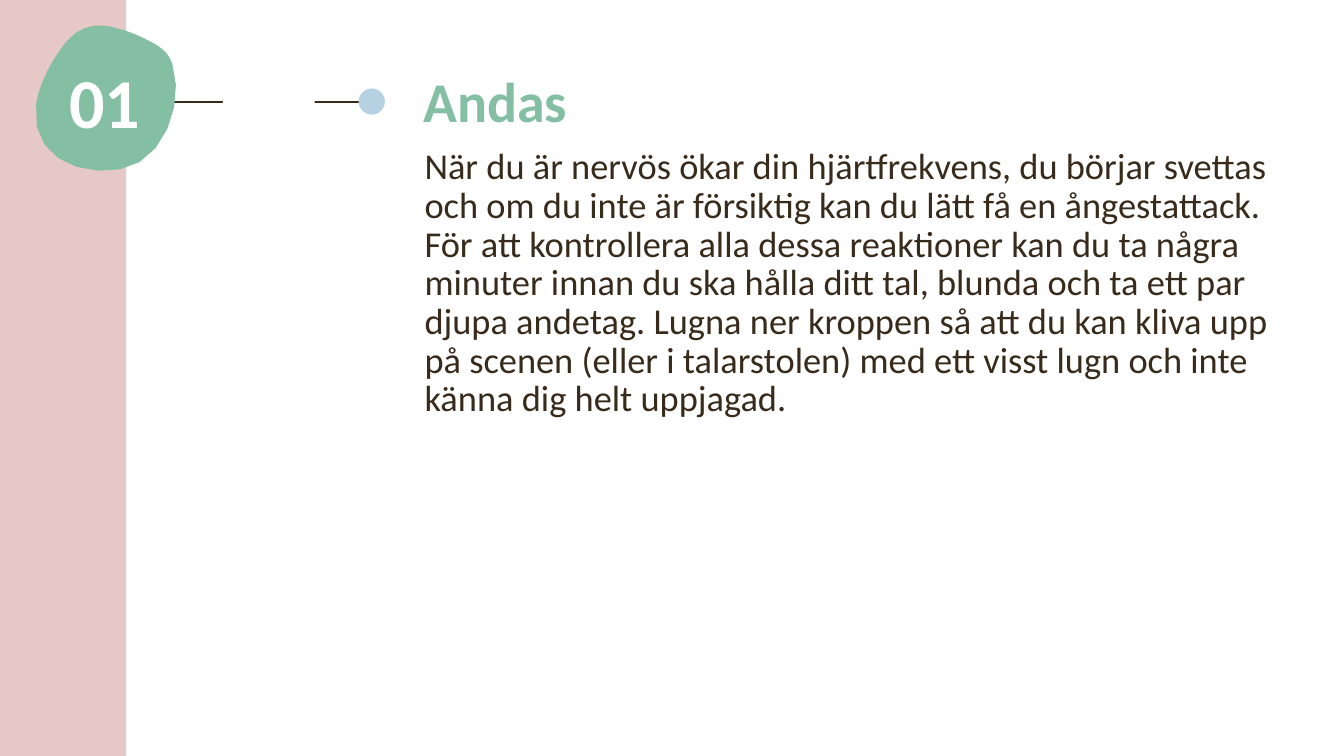
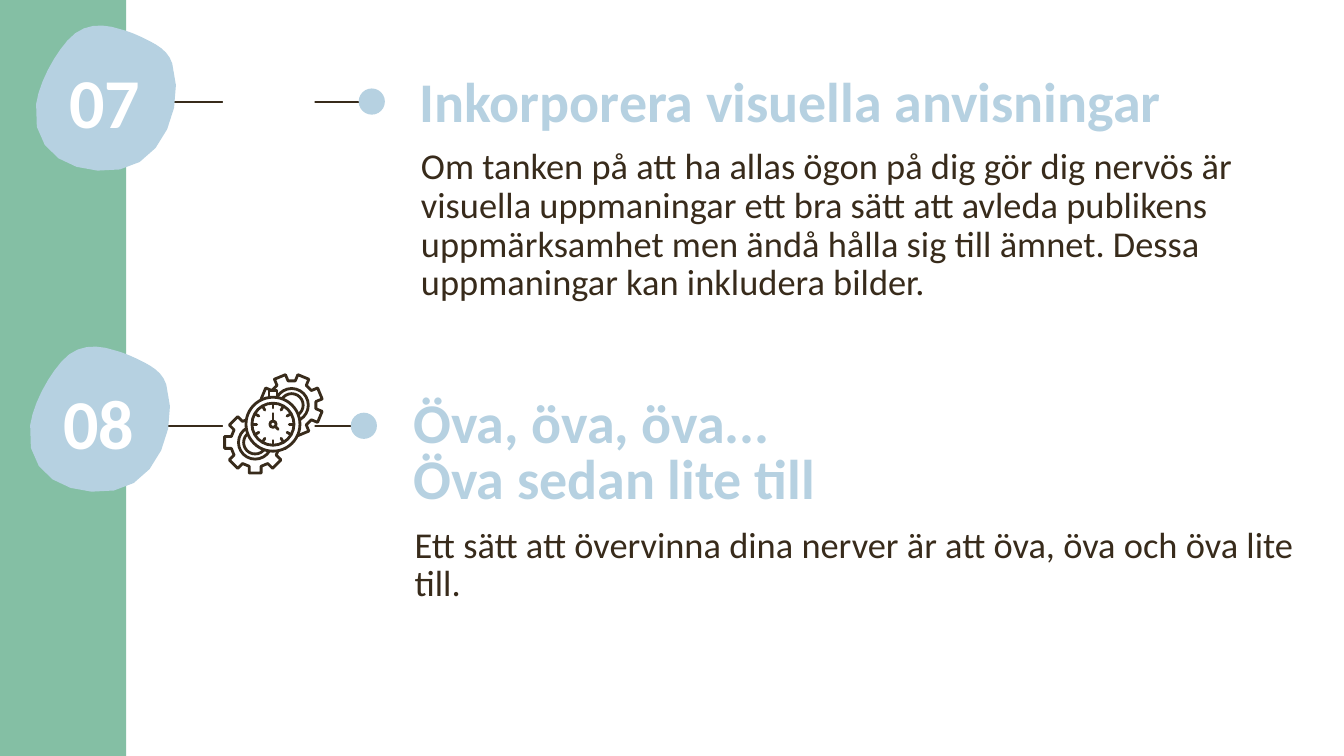
"""Build two slides of numbered advice on public speaking."""
from dataclasses import dataclass
from math import cos, pi, sin

from lxml.etree import SubElement
from pptx import Presentation
from pptx.dml.color import RGBColor as Rgb
from pptx.enum.shapes import MSO_CONNECTOR as Link, MSO_SHAPE as Kind
from pptx.enum.text import PP_ALIGN as Align
from pptx.oxml.ns import qn
from pptx.util import Cm, Pt

Point = tuple[float, float]
Loop = list[Point]
Box = tuple[float, float, float, float]

INK = {"pink": "E6C8C7", "green": "84BFA4", "blue": "B6D1E1",
       "dark": "382B1B", "white": "FFFFFF"}
FONT = "Calibri"
WIDE, HIGH = 33.87, 19.05
BLOB = [
    ((3.05, 0.74), (2.57, 0.58), (2.08, 0.58), (1.7, 1.02)),
    ((1.7, 1.02), (1.35, 1.42), (0.99, 2.08), (0.91, 2.62)),
    ((0.91, 2.62), (0.74, 3.89), (1.88, 4.45), (3.02, 4.27)),
    ((3.02, 4.27), (4.11, 4.09), (4.67, 2.64), (4.34, 1.6)),
    ((4.34, 1.6), (4.24, 1.27), (3.94, 1.12), (3.68, 0.99)),
    ((3.68, 0.99), (3.48, 0.89), (3.25, 0.79), (3.05, 0.74)),
]


@dataclass
class Style:
    size: float
    ink: str
    bold: bool = False
    lead: float | Pt = 1.0
    align: Align = Align.LEFT


@dataclass
class Tip:
    num: str
    title: list[str]
    text: str
    left: float
    size: Point = (22.12, 5.28)
    tall: float = 1.8
    shift: Point = (0, 0)
    rail: Point = (0, 0)
    drop: float = 0


@dataclass
class Page:
    band: str
    tint: str
    tips: list[Tip]
    clock: bool = False


PAGES = [
    Page("pink", "green", [Tip(
        "01", ["Andas"],
        "När du är nervös ökar din hjärtfrekvens, du börjar svettas och om du "
        "inte är försiktig kan du lätt få en ångestattack. För att kontrollera "
        "alla dessa reaktioner kan du ta några minuter innan du ska hålla ditt "
        "tal, blunda och ta ett par djupa andetag. Lugna ner kroppen så att du "
        "kan kliva upp på scenen (eller i talarstolen) med ett visst lugn och "
        "inte känna dig helt uppjagad.", 10.42)]),
    Page("green", "blue", [
        Tip("07", ["Inkorporera visuella anvisningar"],
            "Om tanken på att ha allas ögon på dig gör dig nervös är visuella "
            "uppmaningar ett bra sätt att avleda publikens uppmärksamhet men "
            "ändå hålla sig till ämnet. Dessa uppmaningar kan inkludera bilder.",
            10.33),
        Tip("08", ["Öva, öva, öva...", "Öva sedan lite till"],
            "Ett sätt att övervinna dina nerver är att öva, öva och öva lite "
            "till.", 10.17, (22.81, 5), 3.99, (-0.15, 8.09), (-0.2, 8.17),
            9.53),
    ], clock=True),
]


def tone(name: str) -> Rgb:
    """Return the named colour."""
    return Rgb.from_string(INK[name])


def paint(shape, fill: str | None, line: str | None = None) -> None:
    """Set fill and line, and drop the shadow."""
    shape.shadow.inherit = False
    if fill:
        shape.fill.solid()
        shape.fill.fore_color.rgb = tone(fill)
    else:
        shape.fill.background()
    if line:
        shape.line.color.rgb = tone(line)
        shape.line.width = Pt(2)
    else:
        shape.line.fill.background()


def block(slide, box: Box, fill: str) -> None:
    """Draw a plain rectangle."""
    paint(slide.shapes.add_shape(Kind.RECTANGLE, *map(Cm, box)), fill)


def disc(slide, mid: Point, size: float, fill: str,
         line: str | None = None) -> None:
    """Draw a circle of a given radius."""
    box = (mid[0] - size, mid[1] - size, 2 * size, 2 * size)
    paint(slide.shapes.add_shape(Kind.OVAL, *map(Cm, box)), fill, line)


def stroke(slide, start: Point, end: Point) -> None:
    """Draw a straight dark line."""
    line = slide.shapes.add_connector(Link.STRAIGHT, *map(Cm, start + end))
    line.line.color.rgb = tone("dark")
    line.line.width = Pt(1.5)
    SubElement(line._element.spPr, qn("a:effectLst"))


def trace(slide, loops: list[Loop], fill: str | None,
          line: str | None = None) -> None:
    """Draw closed outlines as one shape."""
    paths = [[(Cm(x), Cm(y)) for x, y in loop] for loop in loops]
    form = slide.shapes.build_freeform(*paths[0][0], scale=1.0)
    for i, dots in enumerate(paths):
        if i:
            form.move_to(*dots[0])
        form.add_line_segments(dots[1:], close=True)
    paint(form.convert_to_shape(), fill, line)


def write(slide, box: Box, lines: list[str], style: Style) -> None:
    """Add a text box with one paragraph per line."""
    frame = slide.shapes.add_textbox(*map(Cm, box)).text_frame
    frame.word_wrap = True
    for i, line in enumerate(lines):
        para = frame.add_paragraph() if i else frame.paragraphs[0]
        para.alignment = style.align
        para.line_spacing = style.lead
        run = para.add_run()
        run.text = line
        run.font.name = FONT
        run.font.size = Pt(style.size)
        run.font.bold = style.bold
        run.font.color.rgb = tone(style.ink)


def curve(ends: tuple[Point, ...], steps: int = 6) -> Loop:
    """Sample one cubic curve, leaving out its end."""
    def spot(t: float, axis: int) -> float:
        """Return one coordinate at t."""
        a, b, c, d = (end[axis] for end in ends)
        u = 1 - t
        return u**3 * a + 3 * u * u * t * b + 3 * u * t * t * c + t**3 * d
    return [(spot(i / steps, 0), spot(i / steps, 1)) for i in range(steps)]


def turn(mid: Point, far: float, angle: float, side: float = 0) -> Point:
    """Return the point far out and to the side along an angle."""
    return (mid[0] + far * cos(angle) - side * sin(angle),
            mid[1] + far * sin(angle) + side * cos(angle))


def ring(mid: Point, size: float, count: int = 24) -> Loop:
    """Return points around a circle."""
    return [turn(mid, size, 2 * pi * k / count) for k in range(count)]


def gear(mid: Point, start: float) -> list[Loop]:
    """Return an eight-toothed outline and two rings."""
    tooth = ((0.6, -0.15), (0.77, -0.15), (0.77, 0.15), (0.6, 0.15))
    teeth = [turn(mid, far, start + k * pi / 4, side)
             for k in range(8) for far, side in tooth]
    return [teeth, ring(mid, 0.42), ring(mid, 0.29)]


def clock(slide) -> None:
    """Draw a stopwatch in front of two gears."""
    mid = (6.88, 10.69)
    x, y = mid
    crown = [(x - 0.1, y - 0.6), (x - 0.1, y - 0.84),
             (x + 0.1, y - 0.84), (x + 0.1, y - 0.6)]
    trace(slide, gear((6.43, 11.15), 0) + gear((7.35, 10.21), pi / 8)
          + [crown], None, "dark")
    disc(slide, mid, 0.68, "white", "dark")
    ticks = [[turn(mid, far, k * pi / 6) for far in (0.41, 0.52)]
             for k in range(12)]
    trace(slide, [ring(mid, 0.53)] + ticks, "white", "dark")
    trace(slide, [ring(mid, 0.08, 8), [(x, y - 0.08), (x, y - 0.27)],
                  [turn(mid, far, pi / 4) for far in (0.08, 0.18)]],
          "white", "dark")


def rail(slide, tip: Tip) -> None:
    """Draw the line and dot that lead to a title."""
    x, y = tip.rail
    stroke(slide, (9.25 + x, 2.56 + y), (3.84 + x, 2.56 + y))
    disc(slide, (9.37 + x, 2.56 + y), 0.33, "blue")


def advise(slide, tip: Tip, tint: str) -> None:
    """Draw the number, title and text of a tip."""
    x, y = tip.shift
    trace(slide, [[(a + x, b + y) for ends in BLOB for a, b in curve(ends)]],
          tint)
    write(slide, (0.5 + x, 1.59 + y, 4.29, 2.39), [tip.num],
          Style(50, "white", True, 0.9, Align.CENTER))
    write(slide, (tip.left + 0.03, 3.62 + tip.drop, *tip.size), [tip.text],
          Style(26, "dark", lead=Pt(27.6)))
    write(slide, (tip.left, 1.83 + y, 21.34, tip.tall), tip.title,
          Style(40, tint, True, Pt(40.2)))


def main() -> None:
    """Build and save the deck."""
    deck = Presentation()
    deck.slide_width, deck.slide_height = Cm(WIDE), Cm(HIGH)
    for page in PAGES:
        slide = deck.slides.add_slide(deck.slide_layouts[6])
        for tip in page.tips:
            rail(slide, tip)
        block(slide, (5.62, 1.55, 2.31, 11.58), "white")
        block(slide, (0, 0, 3.18, HIGH), page.band)
        for tip in page.tips:
            advise(slide, tip, page.tint)
        if page.clock:
            clock(slide)
    deck.save("out.pptx")


if __name__ == "__main__":
    main()
